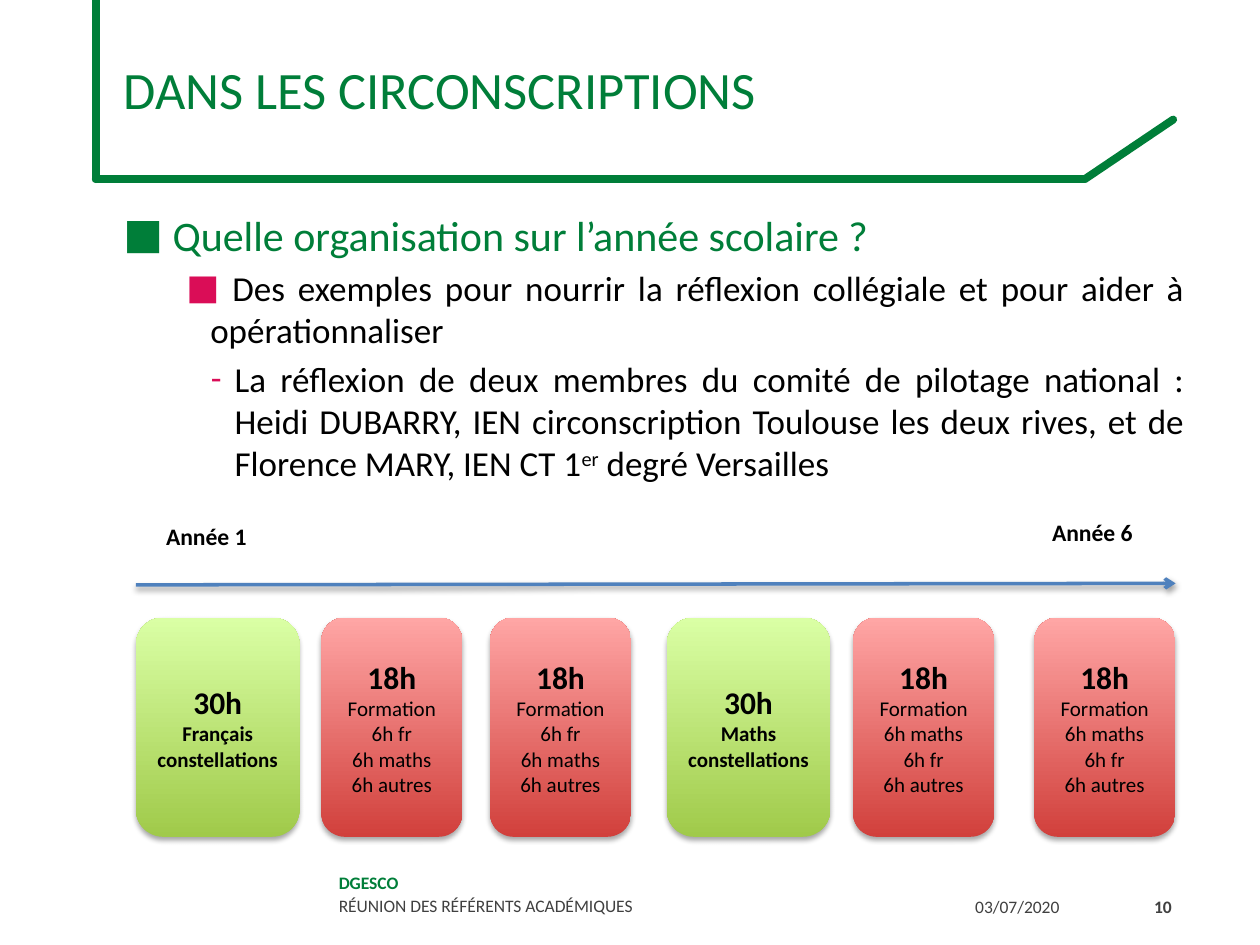
"""Build the slide on how training is organised in the school districts."""
from lxml import etree
from pptx import Presentation
from pptx.dml.color import RGBColor
from pptx.enum.shapes import MSO_CONNECTOR, MSO_SHAPE
from pptx.enum.text import MSO_ANCHOR, PP_ALIGN
from pptx.oxml.ns import qn
from pptx.util import Cm, Pt

STRAIGHT = MSO_CONNECTOR.STRAIGHT
ROUNDED = MSO_SHAPE.ROUNDED_RECTANGLE
TOP, MIDDLE = MSO_ANCHOR.TOP, MSO_ANCHOR.MIDDLE
LEFT, CENTER, RIGHT, JUSTIFY = PP_ALIGN.LEFT, PP_ALIGN.CENTER, PP_ALIGN.RIGHT, PP_ALIGN.JUSTIFY
COLORS = {
    "green": "007E39", "pink": "DA0D57", "black": "000000", "gray": "404040", "blue": "4F81BD",
    "red dark": "D1403C", "red light": "FFA6A5", "lime dark": "A0CA4A", "lime light": "DAFFA5",
}


def add_run(paragraph, text, color, size, **formats):
    run = paragraph.add_run()
    run.text = text
    run.font.color.rgb = RGBColor.from_string(COLORS[color])
    for name, value in {"name": "Calibri", "size": Pt(size), **formats}.items():
        setattr(run.font, name, value)
    return run


def set_shadow(shape, opacity=0, distance=0):
    effects = etree.SubElement(shape._element.spPr, qn("a:effectLst"))
    if opacity:
        shadow = etree.SubElement(effects, qn("a:outerShdw"), blurRad=str(Pt(3.1)),
                                  dist=str(Pt(distance)), dir="5400000", rotWithShape="0")
        color = etree.SubElement(shadow, qn("a:srgbClr"), val=COLORS["black"])
        etree.SubElement(color, qn("a:alpha"), val=str(opacity * 1000))


presentation = Presentation()
presentation.slide_width, presentation.slide_height = Cm(25.4), Cm(19.05)
slide = presentation.slides.add_slide(presentation.slide_layouts[5])

title = slide.shapes.title
title.left, title.top, title.width, title.height = Cm(2.24), Cm(0), Cm(21.89), Cm(3.58)
title.text_frame.vertical_anchor = MIDDLE
title.text_frame.paragraphs[0].alignment = LEFT
add_run(title.text_frame.paragraphs[0], "DANS LES CIRCONSCRIPTIONS", "green", 30)

lines = [
    ((1.93, 3.61, 21.87, 3.61), "green", 4.5),
    ((21.87, 3.61, 23.65, 2.41), "green", 4.5),
    ((1.93, 3.61, 1.93, 0), "green", 4.5),
    ((2.74, 11.79, 23.7, 11.76), "blue", 2),
]
for ends, color, width in lines:
    connector = slide.shapes.add_connector(STRAIGHT, *map(Cm, ends))
    connector.line.color.rgb = RGBColor.from_string(COLORS[color])
    connector.line.width = Pt(width)
    outline = connector.line._get_or_add_ln()
    if color == "blue":
        etree.SubElement(outline, qn("a:tailEnd"), type="arrow")
        set_shadow(connector, 38, 1.6)
    else:
        outline.set("cap", "rnd")
        set_shadow(connector)

body = slide.shapes.add_textbox(Cm(2.24), Cm(4.09), Cm(21.89), Cm(6.2)).text_frame
body.word_wrap = True
bullets = [
    (" Quelle organisation sur l’année scolaire ?", "green", 24, "■", "green", 0.48),
    (" Des exemples pour nourrir la réflexion collégiale et pour aider à opérationnaliser",
     "black", 20, "■", "pink", 1.75),
    ("La réflexion de deux membres du comité de pilotage national : Heidi DUBARRY, "
     "IEN circonscription Toulouse les deux rives, et de Florence MARY, IEN CT 1",
     "black", 20, "-", "pink", 2.24),
]
for level, (text, color, size, marker, marker_color, margin) in enumerate(bullets):
    paragraph = body.add_paragraph() if level else body.paragraphs[0]
    paragraph.level = level
    paragraph.alignment = JUSTIFY
    paragraph.space_before = Pt(4 if level else 0)
    properties = paragraph._p.get_or_add_pPr()
    properties.set("marL", str(Cm(margin)))
    properties.set("indent", str(-Cm(0.48)))
    bullet_color = etree.SubElement(properties, qn("a:buClr"))
    etree.SubElement(bullet_color, qn("a:srgbClr"), val=COLORS[marker_color])
    etree.SubElement(properties, qn("a:buFont"), typeface="Calibri")
    etree.SubElement(properties, qn("a:buChar"), char=marker)
    add_run(paragraph, text, color, size)
ordinal = add_run(paragraph, "er", "black", 20)
ordinal.font._element.set("baseline", "30000")
add_run(paragraph, " degré Versailles", "black", 20)

labels = [
    ((6.58, 17.07, 12.83, 1.88), MIDDLE, LEFT, 10,
     [("DGESCO", "green", True), ("RÉUNION DES RÉFÉRENTS ACADÉMIQUES", "gray", False)]),
    ((19.41, 17.75, 3.23, 1.02), MIDDLE, LEFT, 10, [("03/07/2020", "gray", False)]),
    ((22.63, 17.75, 1.24, 1.02), MIDDLE, RIGHT, 10, [("10", "gray", True)]),
    ((3.1, 10.39, 2.16, 0.84), TOP, LEFT, 13.5, [("Année 1", "black", True)]),
    ((20.96, 10.31, 2.16, 0.84), TOP, LEFT, 13.5, [("Année 6", "black", True)]),
]
for box, anchor, alignment, size, texts in labels:
    frame = slide.shapes.add_textbox(*map(Cm, box)).text_frame
    frame.word_wrap = anchor == MIDDLE
    frame.vertical_anchor = anchor
    for index, (text, color, bold) in enumerate(texts):
        paragraph = frame.add_paragraph() if index else frame.paragraphs[0]
        paragraph.alignment = alignment
        if size == 10:
            paragraph.line_spacing = Pt(13.2)
        add_run(paragraph, text, color, size, bold=bold)

french_first = ["18h", "Formation", "6h fr", "6h maths", "6h autres"]
maths_first = ["18h", "Formation", "6h maths", "6h fr", "6h autres"]
cards = [
    (2.74, "lime", ["30h", "Français", "constellations"]),
    (6.48, "red", french_first),
    (9.88, "red", french_first),
    (13.44, "lime", ["30h", "Maths", "constellations"]),
    (17.2, "red", maths_first),
    (20.85, "red", maths_first),
]
for left, hue, texts in cards:
    width = 3.3 if hue == "lime" else 2.84
    card = slide.shapes.add_shape(ROUNDED, Cm(left), Cm(12.45), Cm(width), Cm(4.42))
    card.fill.gradient()
    card.fill.gradient_angle = 90
    for stop, shade in zip(card.fill.gradient_stops, ("dark", "light")):
        stop.color.rgb = RGBColor.from_string(COLORS[f"{hue} {shade}"])
    card.line.fill.background()
    set_shadow(card, 35, 1.8)
    frame = card.text_frame
    frame.word_wrap = True
    frame.vertical_anchor = MIDDLE
    for index, text in enumerate(texts):
        paragraph = frame.add_paragraph() if index else frame.paragraphs[0]
        paragraph.alignment = CENTER
        add_run(paragraph, text, "black", 12 if index else 18, bold=hue == "lime" or index == 0)

presentation.save("out.pptx")
